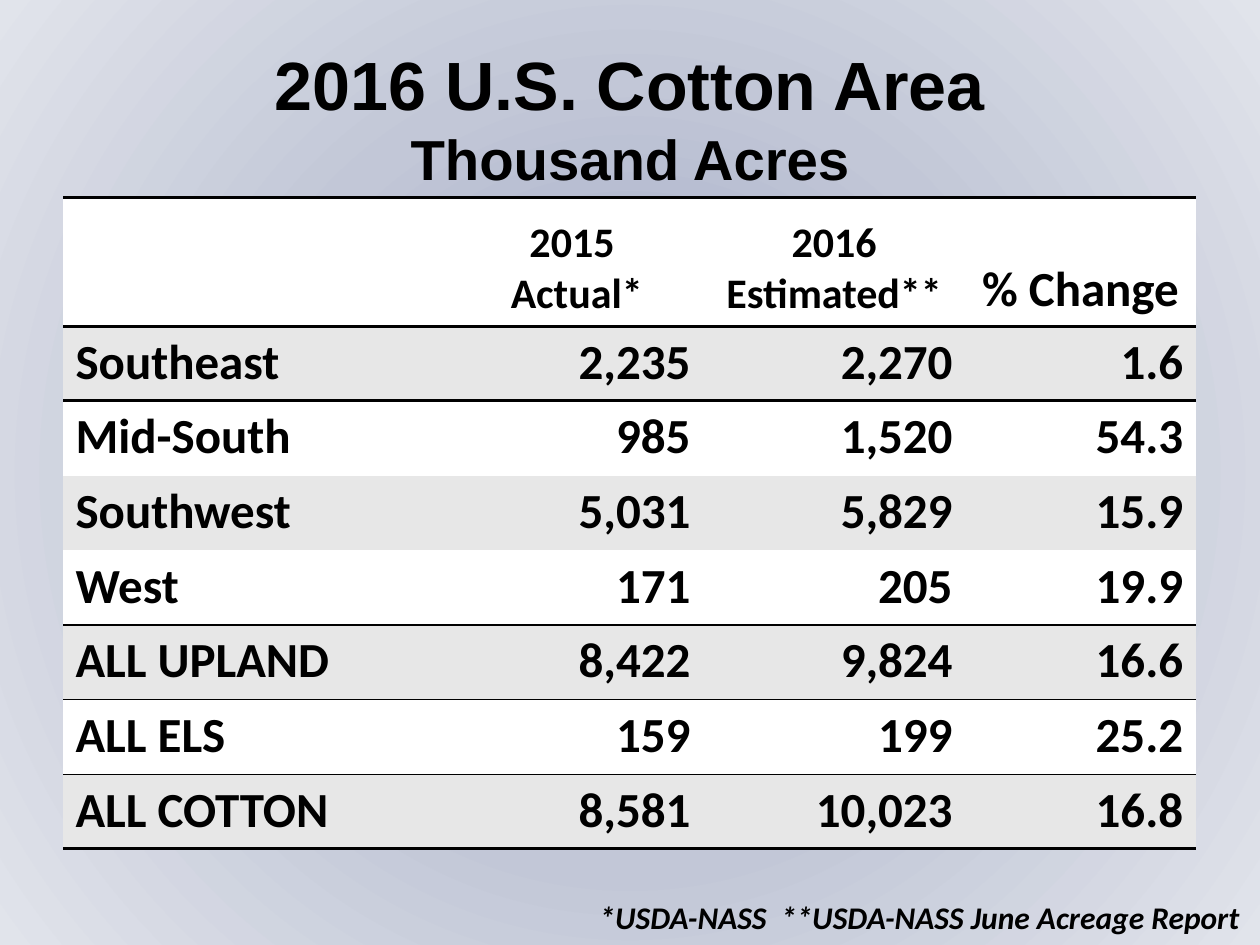
"""Build the 2016 U.S. cotton area slide."""
from typing import NamedTuple

from pptx import Presentation
from pptx.dml.color import RGBColor
from pptx.enum.text import MSO_ANCHOR, PP_ALIGN
from pptx.oxml import parse_xml
from pptx.oxml.ns import nsdecls, qn
from pptx.util import Inches, Pt

LEFT, CENTER, RIGHT = PP_ALIGN.LEFT, PP_ALIGN.CENTER, PP_ALIGN.RIGHT
TOP, MIDDLE, BOTTOM = MSO_ANCHOR.TOP, MSO_ANCHOR.MIDDLE, MSO_ANCHOR.BOTTOM
BLACK = RGBColor(0x00, 0x00, 0x00)
WHITE = RGBColor(0xFF, 0xFF, 0xFF)
GRAY = RGBColor(0xE7, 0xE7, 0xE7)
GLOW = (
    (0, RGBColor(0x98, 0xA3, 0xC1)),
    (50, RGBColor(0xC2, 0xC7, 0xD7)),
    (100, RGBColor(0xE1, 0xE4, 0xEB)),
)
PLAIN_STYLE = "{2D5ABB26-0587-4C30-8999-92F81FD0307C}"
WIDTHS = (3, 2.08, 2.08, 1.83)
HEAD_HEIGHT, TABLE_HEIGHT = 1.02, 5.17


class Row(NamedTuple):
    """One table row with the widths of its rules in points."""
    texts: tuple[str, ...]
    top: int = 0
    bottom: int = 0


ROWS = (
    Row(("", "2015\n Actual*", "2016 Estimated**", "% Change"), 2, 2),
    Row(("Southeast", "2,235", "2,270", "1.6"), top=2),
    Row(("Mid-South", "985", "1,520", "54.3")),
    Row(("Southwest", "5,031", "5,829", "15.9")),
    Row(("West", "171", "205", "19.9"), bottom=1),
    Row(("ALL UPLAND", "8,422", "9,824", "16.6"), top=1),
    Row(("ALL ELS", "159", "199", "25.2"), bottom=1),
    Row(("ALL COTTON", "8,581", "10,023", "16.8"), 1, 2),
)


def style(para, size: float, font: str, align, italic: bool = False) -> None:
    """Format a paragraph and its runs."""
    para.alignment = align
    for run in para.runs:
        run.font.size, run.font.name = Pt(size), font
        run.font.bold, run.font.italic = True, italic
        run.font.color.rgb = BLACK


def paint_back(slide) -> None:
    """Give the slide a round gradient."""
    slide.background.fill.gradient()
    old = slide.element.find(".//" + qn("a:gradFill"))
    stops = "".join(
        f'<a:gs pos="{pos * 1000}"><a:srgbClr val="{color}"/></a:gs>'
        for pos, color in GLOW
    )
    new = parse_xml(
        f'<a:gradFill {nsdecls("a")} rotWithShape="1"><a:gsLst>{stops}</a:gsLst>'
        '<a:path path="circle"><a:fillToRect l="50000" t="50000" r="50000" '
        'b="50000"/></a:path></a:gradFill>'
    )
    old.getparent().replace(old, new)


def add_rule(cell, side: str, width: int) -> None:
    """Draw a black rule on one side of a cell."""
    cell._tc.get_or_add_tcPr().append(parse_xml(
        f'<a:{side} {nsdecls("a")} w="{Pt(width)}"><a:solidFill>'
        f'<a:srgbClr val="{BLACK}"/></a:solidFill></a:{side}>'
    ))


def fill_cell(cell, row: Row, line: int, col: int) -> None:
    """Set the rules, fill and text of one cell."""
    for side, width in (("lnT", row.top), ("lnB", row.bottom)):
        if width:
            add_rule(cell, side, width)
    cell.fill.solid()
    cell.fill.fore_color.rgb = GRAY if line % 2 else WHITE
    cell.vertical_anchor = TOP if line else BOTTOM
    cell.text_frame.text = row.texts[col]
    size = 24 if line == 0 and col < 3 else 28
    align = CENTER if line == 0 else RIGHT if col else LEFT
    for para in cell.text_frame.paragraphs:
        style(para, size, "Calibri", align)


def add_grid(slide) -> None:
    """Add the table of cotton acres."""
    frame = slide.shapes.add_table(
        len(ROWS), len(WIDTHS), Inches(0.5), Inches(1.57),
        Inches(9), Inches(TABLE_HEIGHT))
    frame.element.find(".//" + qn("a:tableStyleId")).text = PLAIN_STYLE
    table = frame.table
    table.horz_banding = False
    for col, width in enumerate(WIDTHS):
        table.columns[col].width = Inches(width)
    body = (TABLE_HEIGHT - HEAD_HEIGHT) / (len(ROWS) - 1)
    for line, row in enumerate(ROWS):
        table.rows[line].height = Inches(body if line else HEAD_HEIGHT)
        for col in range(len(WIDTHS)):
            fill_cell(table.cell(line, col), row, line, col)


def add_title(slide) -> None:
    """Place and format the title."""
    title = slide.shapes.title
    title.left, title.top = Inches(0.5), Inches(0.3)
    title.width, title.height = Inches(9), Inches(1.25)
    frame = title.text_frame
    frame.text = "2016 U.S. Cotton Area\nThousand Acres"
    frame.vertical_anchor = MIDDLE
    for para, size in zip(frame.paragraphs, (39, 32.2)):
        style(para, size, "Arial", CENTER)


def add_note(slide) -> None:
    """Add the line of sources."""
    box = slide.shapes.add_textbox(
        Inches(4.66), Inches(7.08), Inches(5.34), Inches(0.4))
    frame = box.text_frame
    frame.word_wrap = True
    frame.text = "*USDA-NASS  **USDA-NASS June Acreage Report"
    style(frame.paragraphs[0], 18, "Calibri", LEFT, italic=True)


def main() -> None:
    """Build and save the deck."""
    deck = Presentation()
    deck.slide_width, deck.slide_height = Inches(10), Inches(7.5)
    slide = deck.slides.add_slide(deck.slide_layouts[5])
    paint_back(slide)
    add_title(slide)
    add_grid(slide)
    add_note(slide)
    deck.save("out.pptx")


if __name__ == "__main__":
    main()
